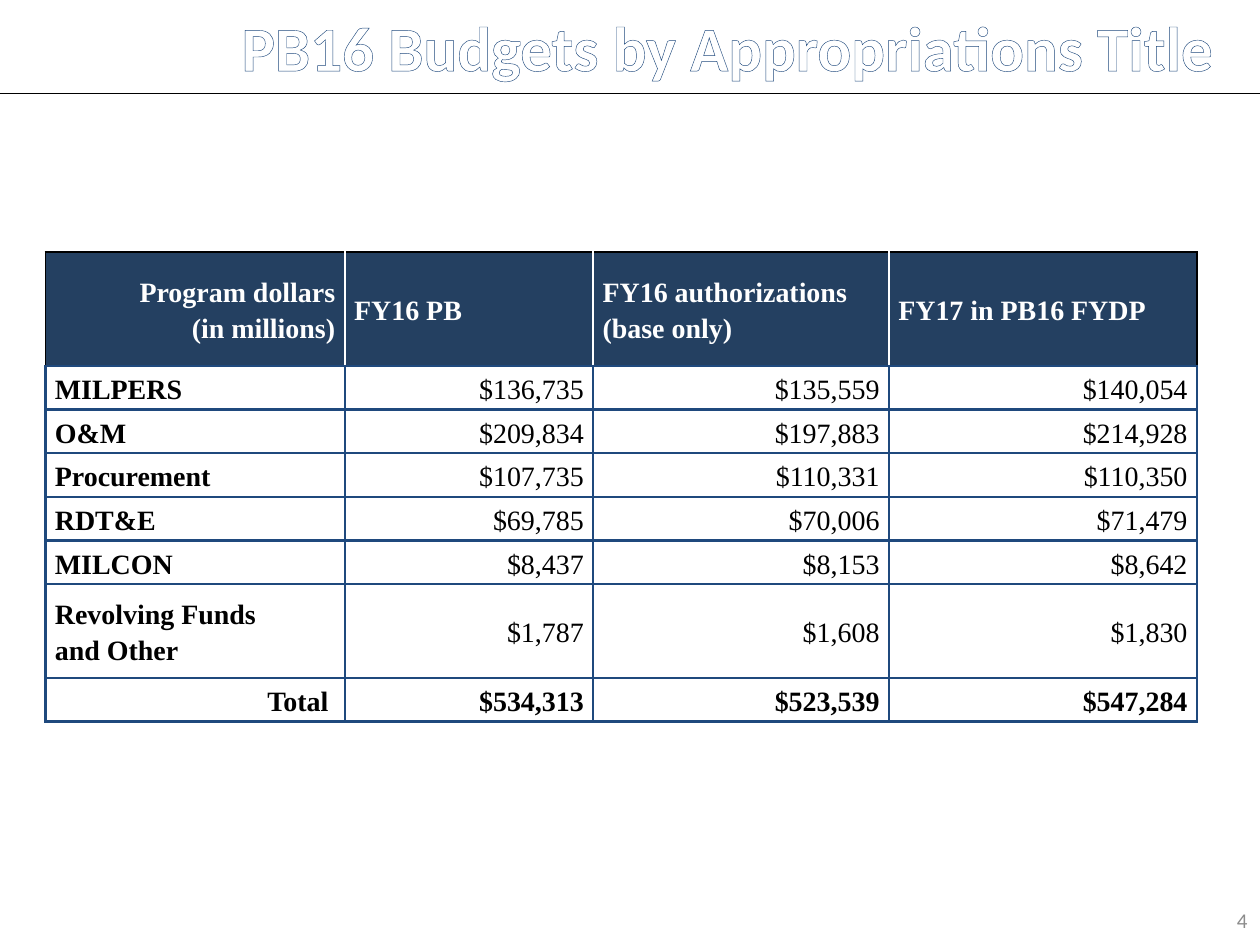
from copy import deepcopy

from lxml import etree
from pptx import Presentation, util as u
from pptx.dml.color import RGBColor
from pptx.enum import shapes, text
from pptx.oxml.ns import qn

Pt = u.Pt
LEFT, MID, RIGHT = text.PP_ALIGN.LEFT, text.PP_ALIGN.CENTER, text.PP_ALIGN.RIGHT

TITLE = "PB16 Budgets by Appropriations Title"
PAGE = "4"
HEAD = ["Program dollars\n(in millions)", "FY16 PB",
        "FY16 authorizations\n(base only)", "FY17 in PB16 FYDP"]
BODY = [
    ["MILPERS", "$136,735", "$135,559", "$140,054"],
    ["O&M", "$209,834", "$197,883", "$214,928"],
    ["Procurement", "$107,735", "$110,331", "$110,350"],
    ["RDT&E", "$69,785", "$70,006", "$71,479"],
    ["MILCON", "$8,437", "$8,153", "$8,642"],
    ["Revolving Funds\nand Other", "$1,787", "$1,608", "$1,830"],
    ["Total ", "$534,313", "$523,539", "$547,284"],
]
COLS = [171, 142, 169, 176]
ROWS = [65, 25, 25, 25, 25, 25, 53.5, 25]

THEME = dict(
    sans="Calibri", serif="Times New Roman",
    ink="000000", paper="FFFFFF", gray="8C8C8C", blue="1F497D", navy="244061",
    title=36, cell=16, page=12,
    thin=0.75, edge=1, grid=1.5,
)
T = THEME


def add_line(parent, tag, color, width, pos):
    """Insert a solid outline element at the given child position."""
    ln = etree.Element(qn(tag), w=str(int(Pt(width))))
    fill = etree.SubElement(ln, qn("a:solidFill"))
    etree.SubElement(fill, qn("a:srgbClr"), val=color)
    parent.insert(pos, ln)


def write(frame, words, size, color, font=T["sans"], bold=False,
          align=LEFT, space=None, outline=None):
    """Fill a text frame with one paragraph; newlines become line breaks."""
    frame.word_wrap = True
    para = frame.paragraphs[0]
    para.alignment = align
    para.line_spacing = space
    for i, part in enumerate(words.split("\n")):
        if i:
            para.add_line_break()
        run = para.add_run()
        run.text = part
        run.font.name, run.font.size, run.font.bold = font, Pt(size), bold
        run.font.color.rgb = RGBColor.from_string(color)
        if outline:
            add_line(run.font._element, "a:ln", outline, T["thin"], 0)
    for gap in para._p.findall(qn("a:br")):
        gap.insert(0, deepcopy(run.font._element))


def add_box(slide, words, left, top, width, height, **style):
    box = slide.shapes.add_textbox(Pt(left), Pt(top), Pt(width), Pt(height))
    box.text_frame.vertical_anchor = text.MSO_ANCHOR.MIDDLE
    write(box.text_frame, words, **style)


def add_rule(slide, top, width):
    rule = slide.shapes.add_connector(
        shapes.MSO_CONNECTOR.STRAIGHT, 0, Pt(top), Pt(width), Pt(top))
    rule.line.color.rgb = RGBColor.from_string(T["ink"])
    rule.line.width = Pt(T["thin"])
    etree.SubElement(rule._element.spPr, qn("a:effectLst"))


def cell_edges(row, col):
    """Return the left, right, top and bottom border of a cell."""
    grid, rim = (T["blue"], T["grid"]), (T["ink"], T["edge"])
    if row:
        return [grid] * 4
    inner = (T["paper"], T["grid"])
    return [inner if col else rim,
            inner if col < len(COLS) - 1 else rim, rim, grid]


def add_budget(slide, left, top):
    data = [HEAD] + BODY
    table = slide.shapes.add_table(
        len(ROWS), len(COLS), Pt(left), Pt(top),
        Pt(sum(COLS)), Pt(sum(ROWS))).table
    table.horz_banding = False
    for col, width in zip(table.columns, COLS):
        col.width = Pt(width)
    for row, height in zip(table.rows, ROWS):
        row.height = Pt(height)
    for r, row in enumerate(data):
        head, total = r == 0, r == len(data) - 1
        for c, words in enumerate(row):
            cell = table.cell(r, c)
            cell.vertical_anchor = text.MSO_ANCHOR.MIDDLE
            cell.margin_left = cell.margin_right = Pt(5.4)
            cell.margin_top = cell.margin_bottom = 0
            if head:
                cell.fill.solid()
                cell.fill.fore_color.rgb = RGBColor.from_string(T["navy"])
            else:
                cell.fill.background()
            right = c == 0 if head else c > 0 or total
            write(cell.text_frame, words, T["cell"],
                  T["paper"] if head else T["ink"], font=T["serif"],
                  bold=head or total or c == 0,
                  align=RIGHT if right else LEFT, space=1.15)
            props = cell._tc.get_or_add_tcPr()
            for i, (side, edge) in enumerate(zip("LRTB", cell_edges(r, c))):
                add_line(props, "a:ln" + side, *edge, i)


def main():
    deck = Presentation()
    deck.slide_width, deck.slide_height = Pt(720), Pt(540)
    slide = deck.slides.add_slide(deck.slide_layouts[6])
    add_rule(slide, 53.3, 720)
    add_box(slide, PAGE, 552, 511, 168, 29,
            size=T["page"], color=T["gray"], align=RIGHT)
    add_box(slide, TITLE, 111.6, 0, 608.4, 52.6, size=T["title"],
            color=T["paper"], bold=True, align=MID, outline=T["blue"])
    add_budget(slide, 26, 144)
    deck.save("out.pptx")


if __name__ == "__main__":
    main()
